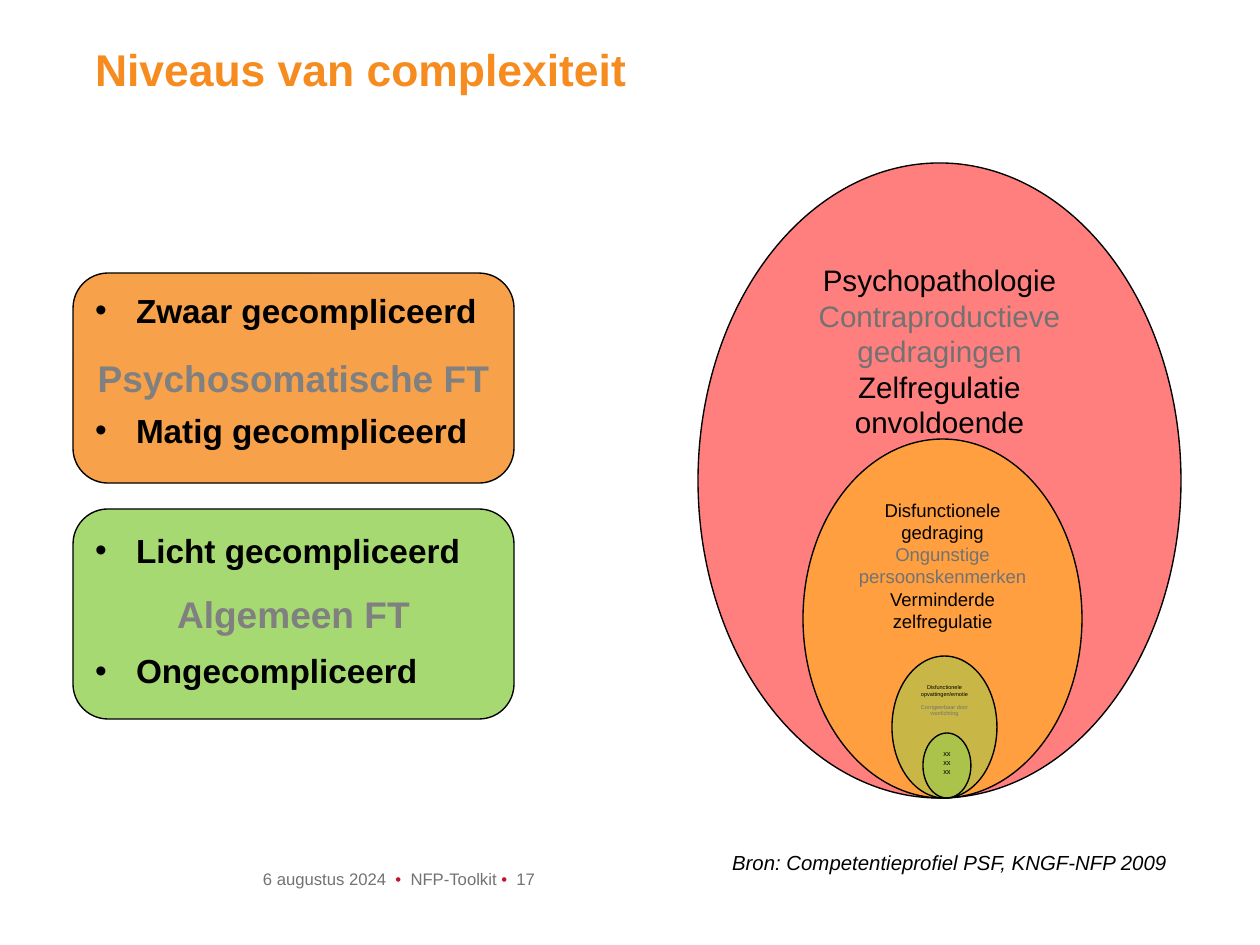
from dataclasses import dataclass
from pptx import Presentation
from pptx.dml.color import RGBColor as RGB
from pptx.enum.shapes import MSO_SHAPE as Kind
from pptx.enum.text import MSO_ANCHOR as Anchor, MSO_AUTO_SIZE as Fit, PP_ALIGN as Align
from pptx.oxml.ns import qn
from pptx.oxml.xmlchemy import OxmlElement as Node
from pptx.util import Pt

SCALE = 6858  # EMU per px


@dataclass(frozen=True)
class Theme:
    font: str = "Arial"
    black: str = "000000"
    gray: str = "727272"
    label: str = "808080"
    orange: str = "F68B1F"
    green: str = "92D050"
    red: str = "FF0000"
    amber: str = "FFC000"
    dot: str = "C4122F"
    title: int = 24
    name: int = 20
    item: int = 18
    outer: int = 16
    middle: int = 10
    inner: int = 3
    core: int = 4
    source: int = 11
    foot: int = 9
    edge: float = 0.75


THEME = Theme()


def px(*vals):
    return [round(val * SCALE) for val in vals]


def write(shape, paras, size, color=THEME.black, bold=False, italic=False,
          align=Align.LEFT, anchor=Anchor.TOP, pad=(13, 7, 13, 7),
          gap=0, bullet=0):
    """Fill a shape with paragraphs, each a list of (text, color) runs or a string."""
    frame = shape.text_frame
    frame.word_wrap = True
    frame.auto_size = Fit.NONE
    frame.vertical_anchor = anchor
    (frame.margin_left, frame.margin_top,
     frame.margin_right, frame.margin_bottom) = px(*pad)
    for num, runs in enumerate(paras):
        para = frame.add_paragraph() if num else frame.paragraphs[0]
        if bullet:
            mark(para, bullet)
        para.alignment = align
        para.line_spacing = 1.0
        para.space_before = Pt(gap if num else 0)
        para.space_after = Pt(0)
        for text, tint in [(runs, color)] if isinstance(runs, str) else runs:
            run = para.add_run()
            run.text = text
            font = run.font
            font.name, font.size = THEME.font, Pt(size)
            font.bold, font.italic = bold, italic
            font.color.rgb = RGB.from_string(tint)


def mark(para, width):
    """Give a paragraph a round bullet with a hanging indent."""
    props = para._p.get_or_add_pPr()
    indent, = px(width)
    props.set("marL", str(indent))
    props.set("indent", str(-indent))
    for tag, key, val in (("a:buFont", "typeface", THEME.font),
                          ("a:buChar", "char", "•")):
        node = Node(tag)
        node.set(key, val)
        props.append(node)


def panel(slide, kind, box, color, alpha):
    """Add an outlined shape with a see-through fill; alpha is in percent."""
    shape = slide.shapes.add_shape(kind, *px(*box))
    shape.shadow.inherit = False
    shape.fill.solid()
    shape.fill.fore_color.rgb = RGB.from_string(color)
    node = Node("a:alpha")
    node.set("val", str(alpha * 1000))
    shape._element.spPr.find(".//" + qn("a:srgbClr")).append(node)
    shape.line.color.rgb = RGB.from_string(THEME.black)
    shape.line.width = Pt(THEME.edge)
    return shape


def level(slide, top, color, name):
    shape = panel(slide, Kind.ROUNDED_RECTANGLE, (73, top, 441, 210), color, 80)
    write(shape, [name], THEME.name, THEME.label, bold=True,
          align=Align.CENTER, anchor=Anchor.MIDDLE, pad=(5, 7, 5, 7))


def oval(slide, box, color, size, paras, **style):
    shape = panel(slide, Kind.OVAL, box, color, 50)
    write(shape, paras, size, align=Align.CENTER, **style)


def label(slide, box, paras, size, **style):
    write(slide.shapes.add_textbox(*px(*box)), paras, size, **style)


def holder(shape, box, paras, size, **style):
    """Move a placeholder, bring it to the front and fill it."""
    shape.left, shape.top, shape.width, shape.height = px(*box)
    shape._element.getparent().append(shape._element)
    write(shape, paras, size, bold=True, **style)


def main():
    deck = Presentation()
    deck.slide_width, deck.slide_height = px(1260, 945)
    slide = deck.slides.add_slide(deck.slide_layouts[1])
    title, body = slide.placeholders

    level(slide, 273, THEME.orange, "Psychosomatische FT")
    level(slide, 509, THEME.green, "Algemeen FT")
    holder(body, (95, 209, 1070, 620),
           ["Zwaar gecompliceerd", "Matig gecompliceerd",
            "Licht gecompliceerd", "Ongecompliceerd"],
           THEME.item, pad=(0, 81, 0, 0), gap=43.3, bullet=41)
    holder(title, (95, 42, 1070, 130), ["Niveaus van complexiteit"],
           THEME.title, color=THEME.orange, pad=(0, 0, 0, 0))

    oval(slide, (698, 163, 483, 635), THEME.red, THEME.outer,
         ["Psychopathologie",
          [("Contraproductieve gedragingen", THEME.gray)],
          "Zelfregulatie onvoldoende"], pad=(13, 6, 13, 6))
    oval(slide, (803, 439, 279, 359), THEME.amber, THEME.middle,
         ["Disfunctionele gedraging",
          [("Ongunstige persoonskenmerken", THEME.gray)],
          "Verminderde zelfregulatie"])
    oval(slide, (892, 656, 105, 142), THEME.green, THEME.inner,
         ["Disfunctionele opvattingen/emotie",
          [("Corrigeerbaar door voorlichting", THEME.gray)]], gap=3.5)
    oval(slide, (923, 733, 48, 65), THEME.green, THEME.core, ["xxxxxx"],
         pad=(12, 7, 12, 7))

    label(slide, (263, 861, 903, 35),
          [[("6 augustus 2024  ", THEME.gray), ("• ", THEME.dot),
            (" NFP-Toolkit ", THEME.gray), ("•  ", THEME.dot),
            ("17", THEME.gray)]],
          THEME.foot, anchor=Anchor.BOTTOM, pad=(0, 0, 0, 7))
    label(slide, (719, 843, 468, 39),
          ["Bron: Competentieprofiel PSF, KNGF-NFP 2009"],
          THEME.source, italic=True)
    deck.save("out.pptx")


if __name__ == "__main__":
    main()
